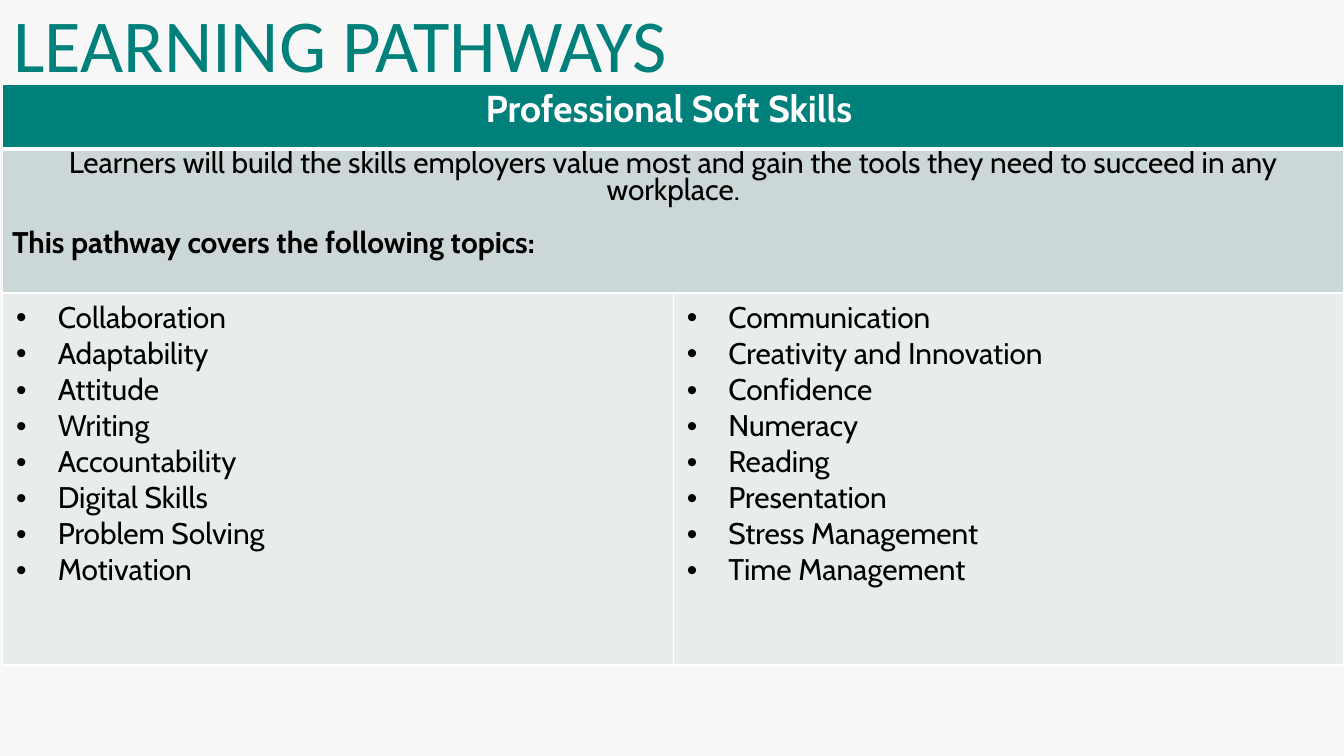
import dataclasses
import typing

import pptx
import pptx.dml.color
import pptx.enum.text
import pptx.oxml
import pptx.oxml.ns
import pptx.util

RGBColor = pptx.dml.color.RGBColor
Align = pptx.enum.text.PP_ALIGN
Anchor = pptx.enum.text.MSO_ANCHOR
Inches = pptx.util.Inches
Pt = pptx.util.Pt

# Colours
TEAL = RGBColor(0x00, 0x80, 0x7A)
INTRO_GREY = RGBColor(0xCB, 0xD8, 0xD7)
TOPIC_GREY = RGBColor(0xE7, 0xED, 0xEC)
PAGE = RGBColor(0xF7, 0xF7, 0xF7)
WHITE = RGBColor(0xFF, 0xFF, 0xFF)
BLACK = RGBColor(0x00, 0x00, 0x00)

# Grid, in inches, on a 16:9 slide
SLIDE_WIDTH = 10
SLIDE_HEIGHT = SLIDE_WIDTH * 9 / 16
TABLE_LEFT, TABLE_TOP = 0.02, 0.63
COLUMN_WIDTH = (SLIDE_WIDTH - TABLE_LEFT) / 2
ROW_HEIGHTS = (0.48, 1.07, 2.77)
BULLET_INDENT = 0.31
THIN, THICK = 0.8, 2.4

TOPICS = (
    ("Collaboration", "Adaptability", "Attitude", "Writing",
     "Accountability", "Digital Skills", "Problem Solving", "Motivation"),
    ("Communication", "Creativity and Innovation", "Confidence", "Numeracy",
     "Reading", "Presentation", "Stress Management", "Time Management"),
)


@dataclasses.dataclass(frozen=True)
class Band:
    """Look of one table row."""
    fill: RGBColor
    anchor: Anchor
    inset: tuple[float, float]
    top_border: float = THIN
    bottom_border: float = THIN


BANDS = (
    Band(TEAL, Anchor.MIDDLE, (0.07, 0.03), bottom_border=THICK),
    Band(INTRO_GREY, Anchor.TOP, (0.07, 0.04), top_border=THICK),
    Band(TOPIC_GREY, Anchor.TOP, (0.1, 0.05)),
)


def write(frame: typing.Any, text: str, *, size: float = 16, font: str = "Cabin",
          color: RGBColor = BLACK, bold: bool = False, align: Align = Align.LEFT,
          line: typing.Optional[float] = None, before: float = 0,
          bullet: bool = False) -> None:
    """Fill the empty first paragraph of a frame, or append a paragraph."""
    paragraph = frame.paragraphs[0] if not frame.text else frame.add_paragraph()
    if bullet:
        properties = paragraph._p.get_or_add_pPr()
        indent = Inches(BULLET_INDENT)
        properties.set("marL", str(indent))
        properties.set("indent", str(-indent))
        for tag, attribute, value in (("a:buFont", "typeface", "Arial"),
                                      ("a:buChar", "char", "•")):
            mark = pptx.oxml.parse_xml(f"<{tag} {pptx.oxml.ns.nsdecls('a')}/>")
            mark.set(attribute, value)
            properties.append(mark)
    paragraph.alignment = align
    paragraph.space_before = Pt(before)
    if line:
        paragraph.line_spacing = Pt(line)
    run = paragraph.add_run()
    run.text = text
    run.font.size = Pt(size)
    run.font.name = font
    run.font.bold = bold
    run.font.color.rgb = color


def style_cell(cell: typing.Any, band: Band) -> None:
    """Set the borders, fill, insets and anchor of a cell."""
    properties = cell._tc.get_or_add_tcPr()
    for side, width in (("L", THIN), ("R", THIN),
                        ("T", band.top_border), ("B", band.bottom_border)):
        properties.append(pptx.oxml.parse_xml(
            f'<a:ln{side} {pptx.oxml.ns.nsdecls("a")} w="{Pt(width)}">'
            f'<a:solidFill><a:srgbClr val="{WHITE}"/></a:solidFill></a:ln{side}>'))
    cell.fill.solid()
    cell.fill.fore_color.rgb = band.fill
    cell.vertical_anchor = band.anchor
    cell.margin_left = cell.margin_right = Inches(band.inset[0])
    cell.margin_top = cell.margin_bottom = Inches(band.inset[1])


def add_title(slide: typing.Any) -> None:
    title = slide.shapes.title
    title.left, title.top = Inches(0), Inches(-0.15)
    title.width, title.height = Inches(0.9 * SLIDE_WIDTH), Inches(0.94)
    title.text_frame.vertical_anchor = Anchor.MIDDLE
    write(title.text_frame, "LEARNING PATHWAYS", size=40, font="Calibri", color=TEAL)


def add_pathway_table(slide: typing.Any) -> None:
    table = slide.shapes.add_table(
        len(BANDS), len(TOPICS), Inches(TABLE_LEFT), Inches(TABLE_TOP),
        Inches(COLUMN_WIDTH * len(TOPICS)), Inches(sum(ROW_HEIGHTS))).table
    table.horz_banding = False
    for column in table.columns:
        column.width = Inches(COLUMN_WIDTH)
    for row, height, band in zip(table.rows, ROW_HEIGHTS, BANDS):
        row.height = Inches(height)
        for cell in row.cells:
            style_cell(cell, band)

    # Heading and introduction span both columns
    for row_index in (0, 1):
        table.cell(row_index, 0).merge(table.cell(row_index, len(TOPICS) - 1))
    write(table.cell(0, 0).text_frame, "Professional Soft Skills ", size=20,
          color=WHITE, bold=True, align=Align.CENTER, line=16.5)
    introduction = table.cell(1, 0).text_frame
    write(introduction, "Learners will build the skills employers value most and gain "
          "the tools they need to succeed in any workplace.",
          align=Align.CENTER, line=14.2)
    write(introduction, "This pathway covers the following topics:",
          bold=True, line=14.2, before=14.2)

    # Topic lists
    for column_index, topics in enumerate(TOPICS):
        for topic in topics:
            write(table.cell(2, column_index).text_frame, topic, bullet=True)


def main() -> None:
    presentation = pptx.Presentation()
    presentation.slide_width = Inches(SLIDE_WIDTH)
    presentation.slide_height = Inches(SLIDE_HEIGHT)
    title_only = presentation.slide_layouts.get_by_name("Title Only")
    slide = presentation.slides.add_slide(title_only)
    slide.background.fill.solid()
    slide.background.fill.fore_color.rgb = PAGE
    add_title(slide)
    add_pathway_table(slide)
    presentation.save("out.pptx")


if __name__ == "__main__":
    main()
